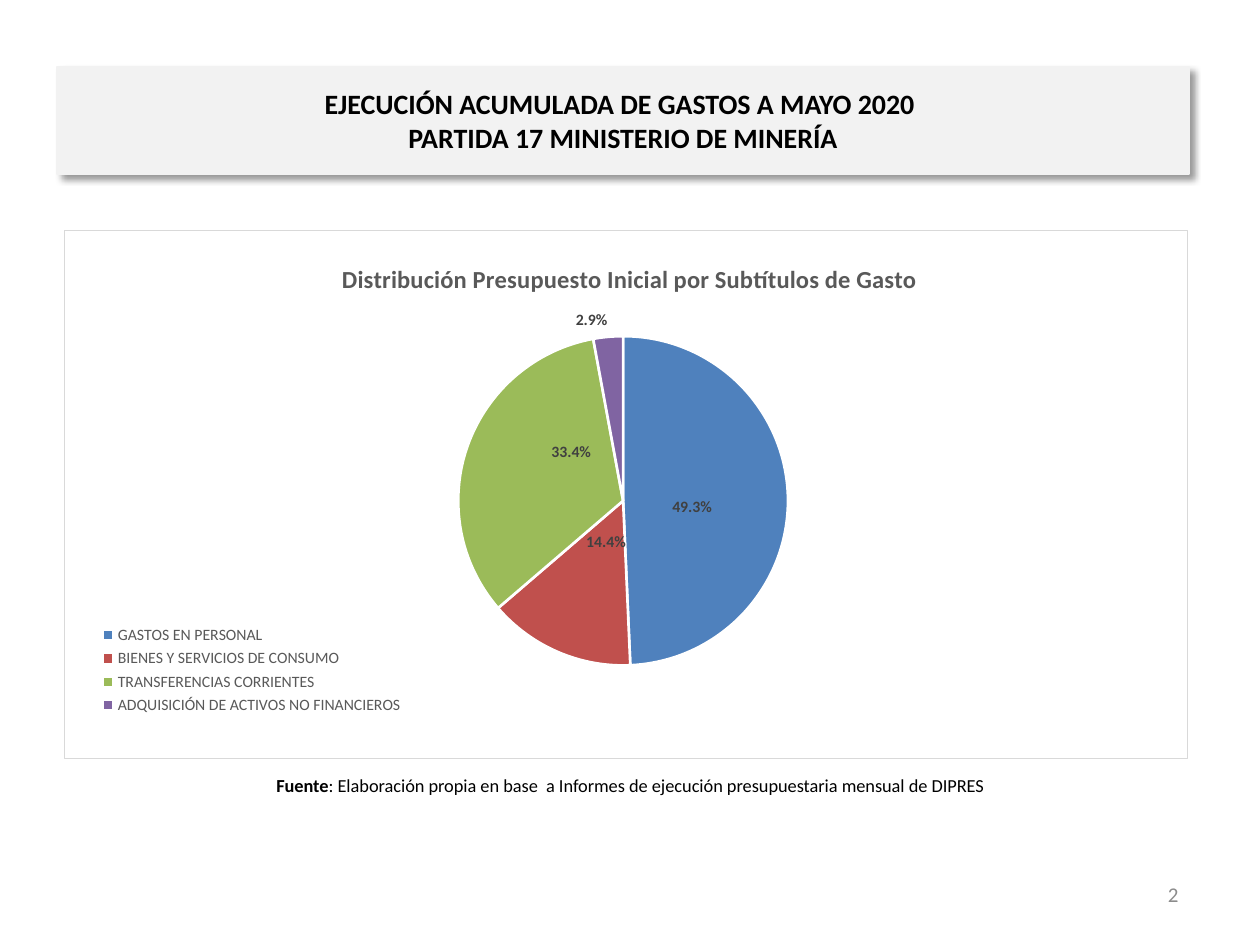
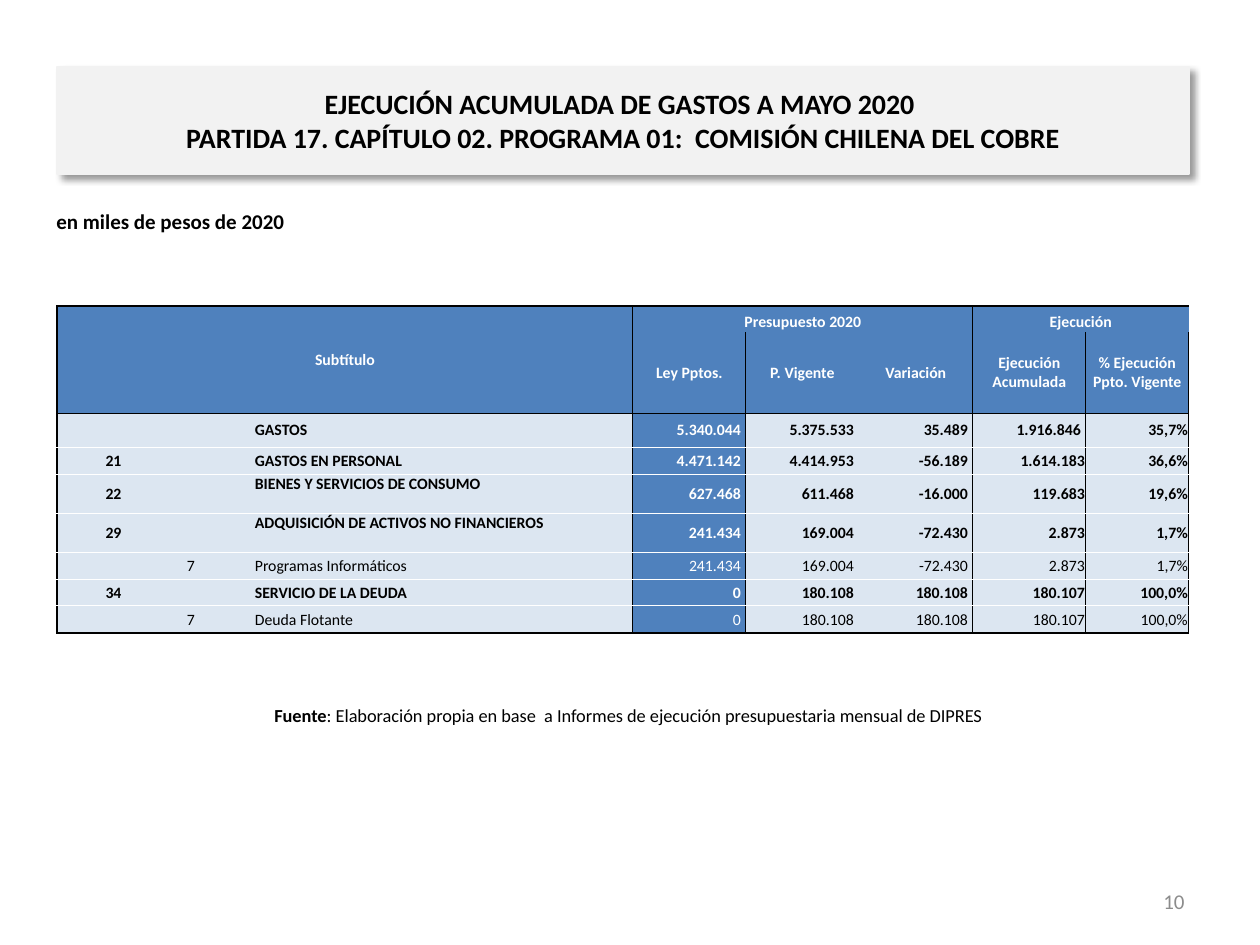
from lxml import etree
from pptx import Presentation, util as u
from pptx.chart.data import CategoryChartData
from pptx.dml.color import RGBColor
from pptx.enum import chart as ch, text
from pptx.oxml import parse_xml
from pptx.oxml.ns import nsdecls, qn

# Shared look
FONT = "Calibri"
BLACK, WHITE, GREY, DARK = "000000", "FFFFFF", "8C8C8C", "595959"
BLUE, PALE, BAND = "4F81BD", "DCE6F1", "F2F2F2"
LEFT, MID, RIGHT = text.PP_ALIGN.LEFT, text.PP_ALIGN.CENTER, text.PP_ALIGN.RIGHT
TOP, HALF, LOW = text.MSO_ANCHOR.TOP, text.MSO_ANCHOR.MIDDLE, text.MSO_ANCHOR.BOTTOM

HEAD = "EJECUCIÓN ACUMULADA DE GASTOS A MAYO 2020 "
SOURCE = ": Elaboración propia en base  a Informes de ejecución presupuestaria mensual de DIPRES"

# Chart content: name, share, colour, label shift in px
CHART_BOX = (64, 230, 1124, 529)
SLICES = [
    ("GASTOS EN PERSONAL", 49.3, BLUE, (-13, 8)),
    ("BIENES Y SERVICIOS DE CONSUMO", 14.4, "C0504D", (16, -34)),
    ("TRANSFERENCIAS CORRIENTES", 33.4, "9BBB59", (26, -21)),
    ("ADQUISICIÓN DE ACTIVOS NO FINANCIEROS", 2.9, "8064A2", None),
]

# Table content
COLS = [113, 42, 42, 379, 113, 113, 114, 113, 103]
ROWS = [26, 81, 34, 27, 39, 39, 27, 27, 27]
SPANS = [(0, 0, 1, 3, "Subtítulo"), (0, 4, 0, 6, "Presupuesto 2020"), (0, 7, 0, 8, "Ejecución")]
FIELDS = ["Ley Pptos.", "P. Vigente", "Variación", "Ejecución Acumulada",
          "% Ejecución Ppto. Vigente"]
SPEND = [
    ("", "", "", "GASTOS", "5.340.044", "5.375.533", "35.489", "1.916.846", "35,7%"),
    ("21", "", "", "GASTOS EN PERSONAL", "4.471.142", "4.414.953", "-56.189", "1.614.183", "36,6%"),
    ("22", "", "", "BIENES Y SERVICIOS DE CONSUMO", "627.468", "611.468", "-16.000", "119.683", "19,6%"),
    ("29", "", "", "ADQUISICIÓN DE ACTIVOS NO FINANCIEROS", "241.434", "169.004", "-72.430", "2.873", "1,7%"),
    ("", "7", "", "Programas Informáticos", "241.434", "169.004", "-72.430", "2.873", "1,7%"),
    ("34", "", "", "SERVICIO DE LA DEUDA", "0", "180.108", "180.108", "180.107", "100,0%"),
    ("", "7", "", "Deuda Flotante", "0", "180.108", "180.108", "180.107", "100,0%"),
]


def px(n):
    return u.Emu(round(n * 914400 / 126))


def rgb(code):
    return RGBColor.from_string(code)


def style(font, size, color, bold=False):
    for key, val in {"name": FONT, "size": u.Pt(size), "bold": bold}.items():
        setattr(font, key, val)
    font.color.rgb = rgb(color)


def paint(shape, fill, line, width):
    shape.fill.solid()
    shape.fill.fore_color.rgb = rgb(fill)
    shape.line.color.rgb = rgb(line)
    shape.line.width = u.Pt(width)


def title(slide, words):
    """Grey title band with a soft shadow."""
    band = slide.shapes.title
    for key, val in zip(("left", "top", "width", "height"), (57, 67, 1132, 107)):
        setattr(band, key, px(val))
    paint(band, BAND, BAND, 0.75)
    band._element.spPr.append(parse_xml(
        f'<a:effectLst {nsdecls("a")}><a:outerShdw blurRad="50800" dist="38100" dir="2700000" '
        f'algn="tl" rotWithShape="0"><a:srgbClr val="{BLACK}"><a:alpha val="40000"/></a:srgbClr>'
        '</a:outerShdw></a:effectLst>'))
    frame = band.text_frame
    frame.text = words
    frame.auto_size = text.MSO_AUTO_SIZE.NONE
    frame.vertical_anchor = HALF
    para = frame.paragraphs[0]
    para.alignment = MID
    for run in para.runs:
        style(run.font, 16, BLACK, True)


def label(slide, box, runs, size, color=BLACK, align=LEFT, anchor=HALF):
    """Text box of one paragraph; runs are (words, bold) pairs."""
    frame = slide.shapes.add_textbox(*map(px, box)).text_frame
    frame.word_wrap = True
    frame.vertical_anchor = anchor
    para = frame.paragraphs[0]
    para.alignment = align
    for words, bold in runs:
        run = para.add_run()
        run.text = words
        style(run.font, size, color, bold)


def source(slide, box):
    label(slide, box, [("Fuente", True), (SOURCE, False)], 10.5, align=MID)


def number(slide, box, digits):
    label(slide, box, [(digits, False)], 12, GREY, RIGHT)


def layout(node, spot, inner=False, edge=True, **sizes):
    """Fix a chart part at fractions of the chart area."""
    for old in node.findall(qn("c:layout")):
        node.remove(old)
    tags = '<c:layoutTarget val="inner"/>' if inner else ""
    if edge:
        tags += '<c:xMode val="edge"/><c:yMode val="edge"/>'
    tags += "".join(f'<c:{key} val="{val}"/>' for key, val in sizes.items())
    node.insert(spot, parse_xml(
        f'<c:layout {nsdecls("c")}><c:manualLayout>{tags}</c:manualLayout></c:layout>'))


def labels(series, chart):
    """Percent labels: the last one outside, the others shifted from the centre."""
    tags = series.data_labels
    for key, val in {"show_percentage": True, "show_value": False, "number_format": "0.0%",
                     "number_format_is_linked": False,
                     "position": ch.XL_LABEL_POSITION.OUTSIDE_END}.items():
        setattr(tags, key, val)
    style(tags.font, 9, "404040", True)
    shifts = [shift for *_, shift in SLICES if shift]
    for i in range(len(shifts)):
        mark = series.points[i].data_label
        style(mark.font, 9, "404040", True)
        mark.position = ch.XL_LABEL_POSITION.CENTER
    for node, (dx, dy) in zip(chart._chartSpace.xpath(".//c:dLbl"), shifts):
        node.find(qn("c:showVal")).set("val", "0")
        node.find(qn("c:showPercent")).set("val", "1")
        node.insert(1, parse_xml(
            f'<c:numFmt {nsdecls("c")} formatCode="0.0%" sourceLinked="0"/>'))
        layout(node, 1, edge=False, x=round(dx / CHART_BOX[2], 3), y=round(dy / CHART_BOX[3], 3))


def pie(slide):
    data = CategoryChartData()
    data.categories = [name for name, *_ in SLICES]
    data.add_series("Series 1", [share for _, share, *_ in SLICES])
    chart = slide.shapes.add_chart(
        ch.XL_CHART_TYPE.PIE, *map(px, CHART_BOX), data).chart
    style(chart.font, 10, BLACK)
    # Frame
    space = chart._chartSpace
    space.find(qn("c:chart")).addnext(parse_xml(
        f'<c:spPr {nsdecls("c", "a")}><a:solidFill><a:srgbClr val="{WHITE}"/></a:solidFill>'
        '<a:ln w="9525"><a:solidFill><a:srgbClr val="D9D9D9"/></a:solidFill></a:ln></c:spPr>'))
    # Heading
    frame = chart.chart_title.text_frame
    frame.text = "Distribución Presupuesto Inicial por Subtítulos de Gasto"
    style(frame.paragraphs[0].runs[0].font, 14, DARK, True)
    layout(space.xpath(".//c:title")[0], 1, x=0.243, y=0.05)
    # Legend
    chart.has_legend = True
    chart.legend.position = ch.XL_LEGEND_POSITION.LEFT
    chart.legend.include_in_layout = False
    style(chart.legend.font, 9, DARK)
    layout(space.xpath(".//c:legend")[0], 1, x=0.03, y=0.74)
    # Slices
    plot = chart.plots[0]
    plot.vary_by_categories = True
    layout(space.xpath(".//c:plotArea")[0], 0, inner=True, x=0.35, y=0.2, w=0.295, h=0.624)
    series = plot.series[0]
    for i, (_, _, color, _) in enumerate(SLICES):
        paint(series.points[i].format, color, WHITE, 1.5)
    labels(series, chart)


def edges(cell, r, c):
    """Black frame and group lines, white lines between body rows."""
    last = len(ROWS) - 1
    thin, thick, pale = (BLACK, 0.5), (BLACK, 1), (WHITE, 0.5)
    sides = {
        "L": thick if c == 0 else thin if c in (4, 7) else None,
        "R": thick if c == 8 else thin if c in (3, 6) else None,
        "T": {0: thick, 1: None, 2: thin}.get(r, pale),
        "B": {0: None, 1: thin, last: thick}.get(r, pale),
    }
    props = cell._tc.get_or_add_tcPr()
    for side, line in sides.items():
        if line:
            color, width = line
            props.append(parse_xml(
                f'<a:ln{side} {nsdecls("a")} w="{int(width * 12700)}"><a:solidFill>'
                f'<a:srgbClr val="{color}"/></a:solidFill></a:ln{side}>'))


def fill(cell, words, color, bold, align, anchor=HALF, pad=1):
    para = cell.text_frame.paragraphs[0]
    para.alignment = align
    run = para.add_run()
    run.text = words
    style(run.font, 9, color, bold)
    cell.vertical_anchor = anchor
    cell.margin_right = px(pad)


def table(slide):
    grid = slide.shapes.add_table(
        len(ROWS), len(COLS), *map(px, (57, 306, sum(COLS), sum(ROWS)))).table
    grid.first_row = grid.horz_banding = False
    grid._tbl.tblPr.find(qn("a:tableStyleId")).text = "{2D5ABB26-0587-4C30-8999-92F81FD0307C}"
    for col, wide in zip(grid.columns, COLS):
        col.width = px(wide)
    for row, tall in zip(grid.rows, ROWS):
        row.height = px(tall)
    # Fills, margins and lines
    for r in range(len(ROWS)):
        for c in range(len(COLS)):
            cell = grid.cell(r, c)
            edges(cell, r, c)
            cell.fill.solid()
            cell.fill.fore_color.rgb = rgb(BLUE if r < 2 or c == 4 else PALE)
            for key, val in {"left": 1, "right": 1, "top": 1, "bottom": 0}.items():
                setattr(cell, f"margin_{key}", px(val))
    # Header
    for r, c, low, end, words in SPANS:
        grid.cell(r, c).merge(grid.cell(low, end))
        fill(grid.cell(r, c), words, WHITE, True, MID, HALF if low else LOW)
    for c, words in enumerate(FIELDS, 4):
        fill(grid.cell(1, c), words, WHITE, True, MID)
    # Body
    for r, record in enumerate(SPEND, 2):
        for c, words in enumerate(record):
            if words:
                fill(grid.cell(r, c), words, WHITE if c == 4 else BLACK, not record[1],
                     MID if c < 3 else LEFT if c == 3 else RIGHT,
                     TOP if c == 3 and ROWS[r] == 39 else HALF,
                     5 if c in (4, 5, 6) or (r, c) == (2, 7) else 1)
    # Empty cells keep the small size so that rows do not grow
    for cell in grid.iter_cells():
        if not cell.text_frame.text:
            etree.SubElement(cell.text_frame.paragraphs[0]._p, qn("a:endParaRPr"), sz="900")


def main():
    deck = Presentation()
    deck.slide_width, deck.slide_height = px(1260), px(945)
    plain = deck.slide_layouts[5]

    # Spending by subtitle
    slide = deck.slides.add_slide(plain)
    title(slide, HEAD + "\vPARTIDA 17 MINISTERIO DE MINERÍA")
    pie(slide)
    source(slide, (100, 760, 1061, 50))
    number(slide, (897, 869, 294, 50), "2")

    # Copper commission budget
    slide = deck.slides.add_slide(plain)
    title(slide, HEAD + "\vPARTIDA 17. CAPÍTULO 02. PROGRAMA 01:  COMISIÓN CHILENA DEL COBRE")
    label(slide, (44, 202, 987, 43), [("en miles de pesos de 2020", True)], 12, anchor=TOP)
    table(slide)
    source(slide, (64, 690, 1129, 50))
    number(slide, (903, 876, 294, 50), "10")

    deck.save("out.pptx")


if __name__ == "__main__":
    main()
